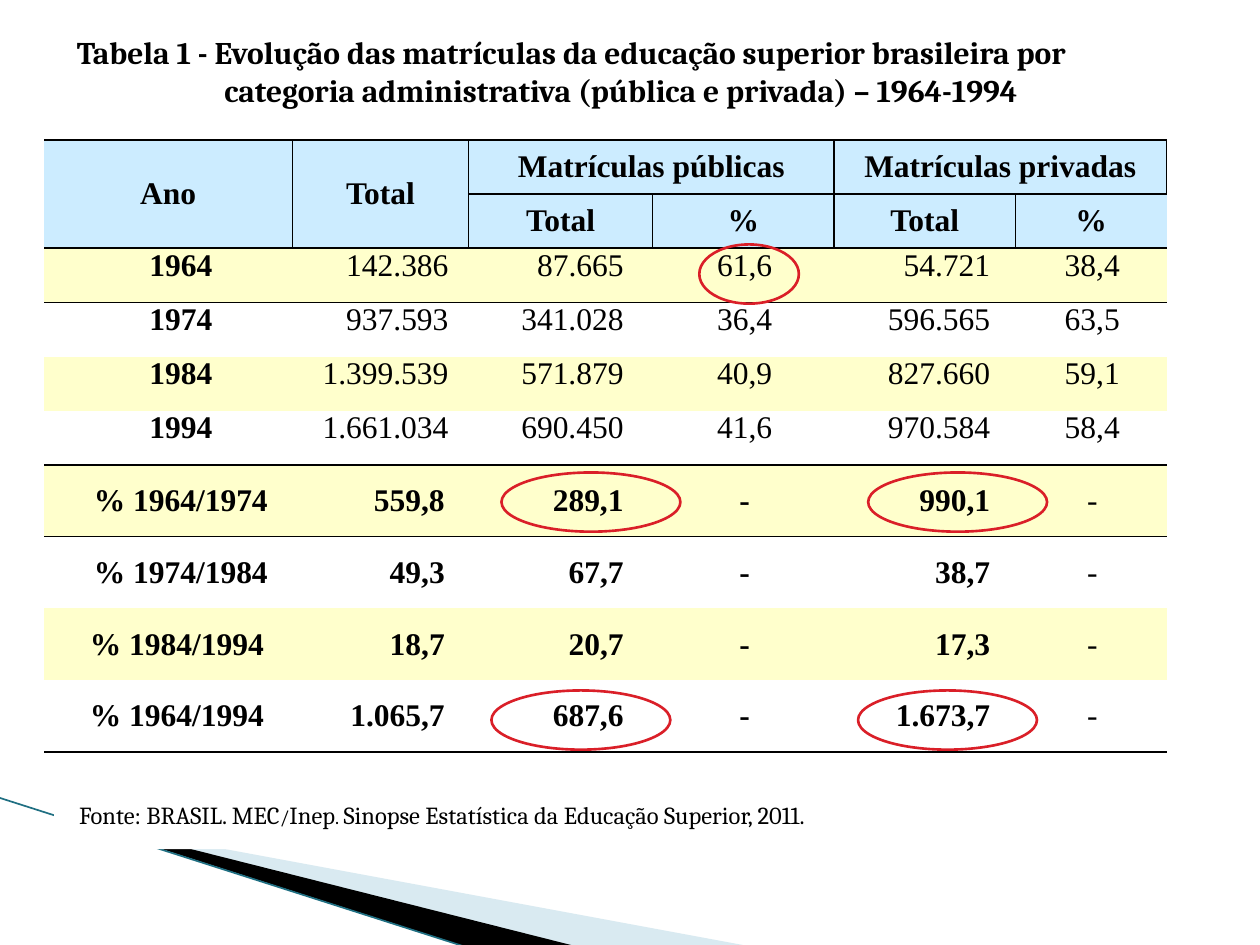
from lxml.etree import SubElement
from pptx import Presentation
from pptx.dml.color import RGBColor
from pptx.enum.shapes import MSO_CONNECTOR, MSO_SHAPE
from pptx.enum.text import MSO_ANCHOR as Anchor, PP_ALIGN as Align
from pptx.oxml.ns import qn
from pptx.util import Inches, Pt

BLACK = RGBColor(0x00, 0x00, 0x00)
WHITE = RGBColor(0xFF, 0xFF, 0xFF)
HEADER_BLUE = RGBColor(0xCC, 0xEC, 0xFF)
BAND_YELLOW = RGBColor(0xFF, 0xFF, 0xCC)
RING_RED = RGBColor(0xDA, 0x1F, 0x28)
PALE_TEAL = RGBColor(0xA0, 0xCB, 0xDC)
LINE_TEAL = RGBColor(0x1F, 0x6F, 0x82)
PLAIN_TABLE = "{2D5ABB26-0587-4C30-8999-92F81FD0307C}"

COLUMNS = [1.97, 1.4, 1.46, 1.44, 1.44, 1.2]
ROWS = [0.43] * 6 + [0.57] * 4
HEADER = [
    ["Ano", "Total", "Matrículas públicas", "", "Matrículas privadas", ""],
    ["", "", "Total", "%", "Total", "%"],
]
ENROLMENTS = [
    ["1964", "142.386", "87.665", "61,6", "54.721", "38,4"],
    ["1974", "937.593", "341.028", "36,4", "596.565", "63,5"],
    ["1984", "1.399.539", "571.879", "40,9", "827.660", "59,1"],
    ["1994", "1.661.034", "690.450", "41,6", "970.584", "58,4"],
]
GROWTH = [
    ["% 1964/1974", "559,8", "289,1", "-", "990,1", "-"],
    ["% 1974/1984", "49,3", "67,7", "-", "38,7", "-"],
    ["% 1984/1994 ", "18,7", "20,7", "-", "17,3", "-"],
    ["% 1964/1994 ", "1.065,7", "687,6", "-", "1.673,7", "-"],
]
MERGES = [(0, 0, 1, 0), (0, 1, 1, 1), (0, 2, 0, 3), (0, 4, 0, 5)]
LEFT_MARGINS = [0.27, 0, 0.07, 0.09, 0.07, 0.09]
RIGHT_MARGINS = [0.07, 0.16, 0.23, 0.07, 0.2, 0.07]
GROWTH_TOTAL_MARGIN = 0.19
RINGS = [
    (3.98, 3.75, 1.42),
    (3.9, 5.48, 1.42),
    (6.89, 3.75, 1.42),
    (6.81, 5.48, 1.42),
    (5.55, 1.94, 0.79),
]


class SlideBuilder:
    heading_font = "Cambria"
    table_font = "Times New Roman"

    def __init__(self, page):
        self.page = page

    def style(self, font, name, size, bold=False):
        font.name = name
        font.size = Pt(size)
        font.bold = bold
        font.color.rgb = BLACK

    def title(self, text, left, top, width, height, hanging):
        box = self.page.shapes.title
        box.left, box.top = Inches(left), Inches(top)
        box.width, box.height = Inches(width), Inches(height)
        frame = box.text_frame
        frame.text = text
        frame.vertical_anchor = Anchor.TOP
        para = frame.paragraphs[0]
        para.alignment = Align.LEFT
        properties = para._p.get_or_add_pPr()
        properties.set("marL", str(Inches(hanging)))
        properties.set("indent", str(-Inches(hanging)))
        self.style(para.runs[0].font, self.heading_font, 18, True)

    def wedge(self, points, color, alpha=None):
        builder = self.page.shapes.build_freeform(
            Inches(points[0][0]), Inches(points[0][1]), scale=1.0
        )
        builder.add_line_segments([(Inches(x), Inches(y)) for x, y in points[1:]])
        shape = builder.convert_to_shape()
        shape.shadow.inherit = False
        shape.fill.solid()
        shape.fill.fore_color.rgb = color
        shape.line.fill.background()
        if alpha:
            tint = shape._element.spPr.find(qn("a:solidFill"))[0]
            SubElement(tint, qn("a:alpha")).set("val", str(alpha * 1000))

    def line(self, start, end, color, width):
        connector = self.page.shapes.add_connector(
            MSO_CONNECTOR.STRAIGHT, *map(Inches, start + end)
        )
        connector.line.color.rgb = color
        connector.line.width = Pt(width)
        SubElement(connector._element.spPr, qn("a:effectLst"))

    def source_note(self, parts, left, top, width, height):
        box = self.page.shapes.add_shape(
            MSO_SHAPE.RECTANGLE, *map(Inches, (left, top, width, height))
        )
        box.shadow.inherit = False
        box.fill.solid()
        box.fill.fore_color.rgb = WHITE
        box.line.fill.background()
        para = box.text_frame.paragraphs[0]
        para.alignment = Align.LEFT
        para._p.get_or_add_pPr().set("indent", str(Inches(0.1)))
        for text, small_caps in parts:
            span = para.add_run()
            span.text = text
            self.style(span.font, self.heading_font, 14)
            if small_caps:
                span._r.get_or_add_rPr().set("cap", "small")

    def ring(self, left, top, width):
        shape = self.page.shapes.add_shape(
            MSO_SHAPE.OVAL, *map(Inches, (left, top, width, 0.47))
        )
        shape.shadow.inherit = False
        shape.fill.background()
        shape.line.color.rgb = RING_RED
        shape.line.width = Pt(1.5)

    def borders(self, cell, sides):
        for side in "LRTB":
            if side in sides:
                edge = SubElement(cell._tc.get_or_add_tcPr(), qn(f"a:ln{side}"), w=str(Pt(1)))
                fill = SubElement(edge, qn("a:solidFill"))
                SubElement(fill, qn("a:srgbClr"), val=str(BLACK))

    def fill_cell(self, cell, color):
        if color is None:
            cell.fill.background()
        else:
            cell.fill.solid()
            cell.fill.fore_color.rgb = color

    def write_cell(self, cell, text, alignment, bold, anchor, left, right):
        cell.margin_left, cell.margin_right = Inches(left), Inches(right)
        cell.margin_top = cell.margin_bottom = 0
        cell.vertical_anchor = anchor
        cell.text_frame.text = text
        para = cell.text_frame.paragraphs[0]
        para.alignment = alignment
        self.style(para.font, self.table_font, 18, bold)
        for span in para.runs:
            self.style(span.font, self.table_font, 18, bold)

    def header_cell(self, cell, text, column):
        sides = "TB" + ("L" if column > 0 else "") + ("R" if column < 5 else "")
        self.borders(cell, sides)
        self.fill_cell(cell, HEADER_BLUE)
        self.write_cell(cell, text, Align.CENTER, True, Anchor.MIDDLE, 0.07, 0.07)

    def data_cell(self, cell, text, row, column):
        growth = row >= 6
        sides = {2: "T", 5: "B", 6: "T", 9: "B"}.get(row, "")
        self.borders(cell, sides)
        self.fill_cell(cell, BAND_YELLOW if row % 2 == 0 else None)
        alignment = Align.RIGHT if column in (1, 2, 4) else Align.CENTER
        bold = column < 5 if growth else column == 0
        anchor = Anchor.MIDDLE if growth else Anchor.TOP
        right = GROWTH_TOTAL_MARGIN if growth and column == 1 else RIGHT_MARGINS[column]
        self.write_cell(cell, text, alignment, bold, anchor, LEFT_MARGINS[column], right)

    def table(self, left, top):
        frame = self.page.shapes.add_table(
            len(ROWS), len(COLUMNS), Inches(left), Inches(top),
            Inches(sum(COLUMNS)), Inches(sum(ROWS)),
        )
        table = frame.table
        table.first_row = table.horz_banding = False
        table._tbl.tblPr.find(qn("a:tableStyleId")).text = PLAIN_TABLE
        for column, width in zip(table.columns, COLUMNS):
            column.width = Inches(width)
        for row, height in zip(table.rows, ROWS):
            row.height = Inches(height)
        for row, texts in enumerate(HEADER + ENROLMENTS + GROWTH):
            for column, text in enumerate(texts):
                cell = table.cell(row, column)
                if row < len(HEADER):
                    self.header_cell(cell, text, column)
                else:
                    self.data_cell(cell, text, row, column)
        for top_row, first, bottom_row, last in MERGES:
            table.cell(top_row, first).merge(table.cell(bottom_row, last))


def main():
    deck = Presentation()
    deck.slide_width, deck.slide_height = Inches(10), Inches(7.5)
    builder = SlideBuilder(deck.slides.add_slide(deck.slide_layouts[5]))
    builder.wedge([(0.55, 6.51), (5.95, 7.51), (4.56, 7.51), (0.55, 6.5)], PALE_TEAL, 40)
    builder.wedge([(0.53, 6.49), (4.57, 7.51), (3.72, 7.52), (0.54, 6.5)], BLACK)
    builder.line((-0.01, 6.33), (3.71, 7.52), LINE_TEAL, 0.95)
    builder.source_note(
        [
            ("Fonte: BRASIL. MEC", False),
            ("/", True),
            ("Inep", False),
            (". ", True),
            ("Sinopse Estatística da Educação Superior, 2011.", False),
        ],
        0.43, 6.19, 8.63, 0.55,
    )
    builder.title(
        "Tabela 1 - Evolução das matrículas da educação superior brasileira por "
        "categoria administrativa (pública e privada) – 1964-1994",
        0.51, 0.21, 8.98, 0.71, 1.17,
    )
    builder.table(0.35, 1.11)
    for ring in RINGS:
        builder.ring(*ring)
    deck.save("out.pptx")


if __name__ == "__main__":
    main()
